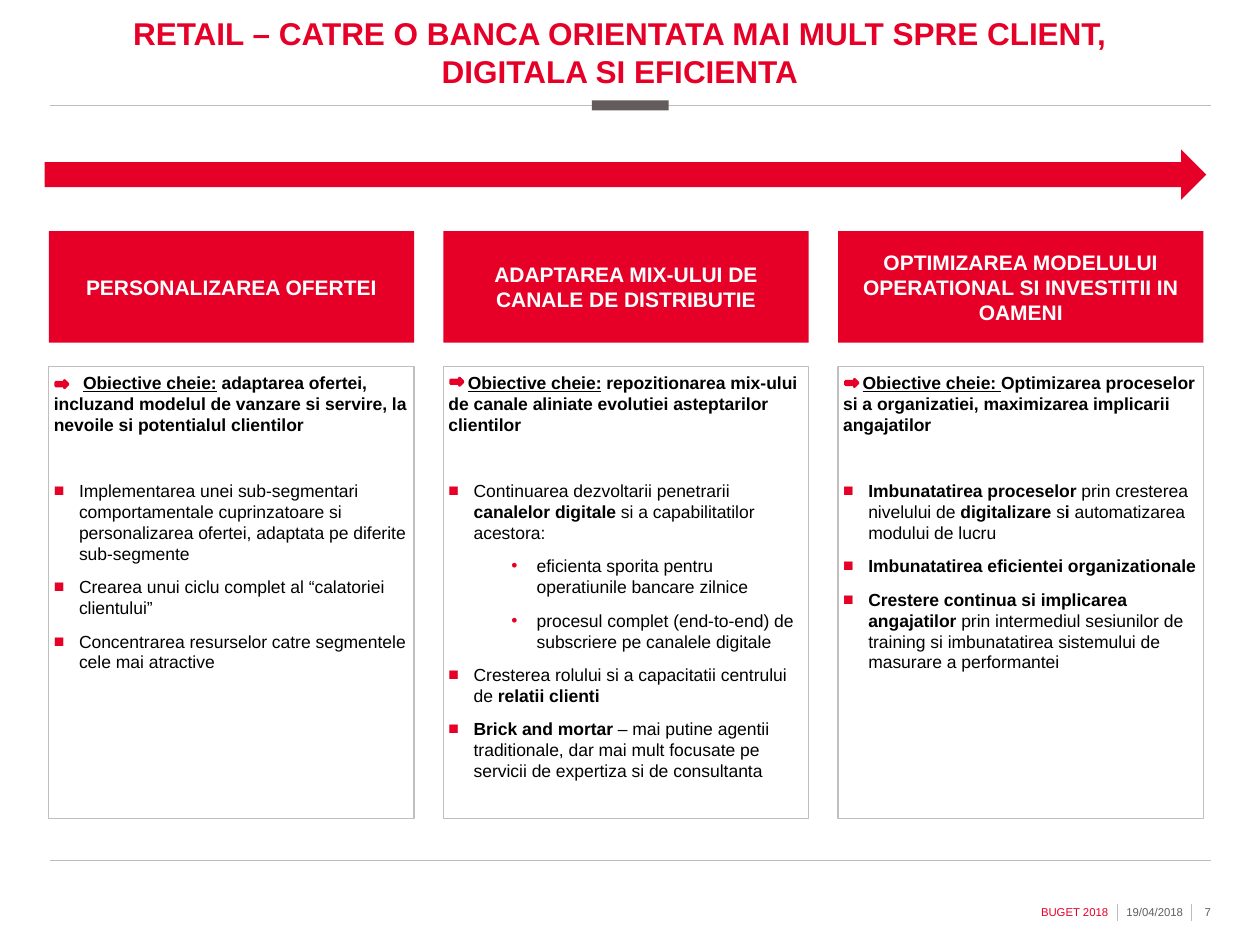
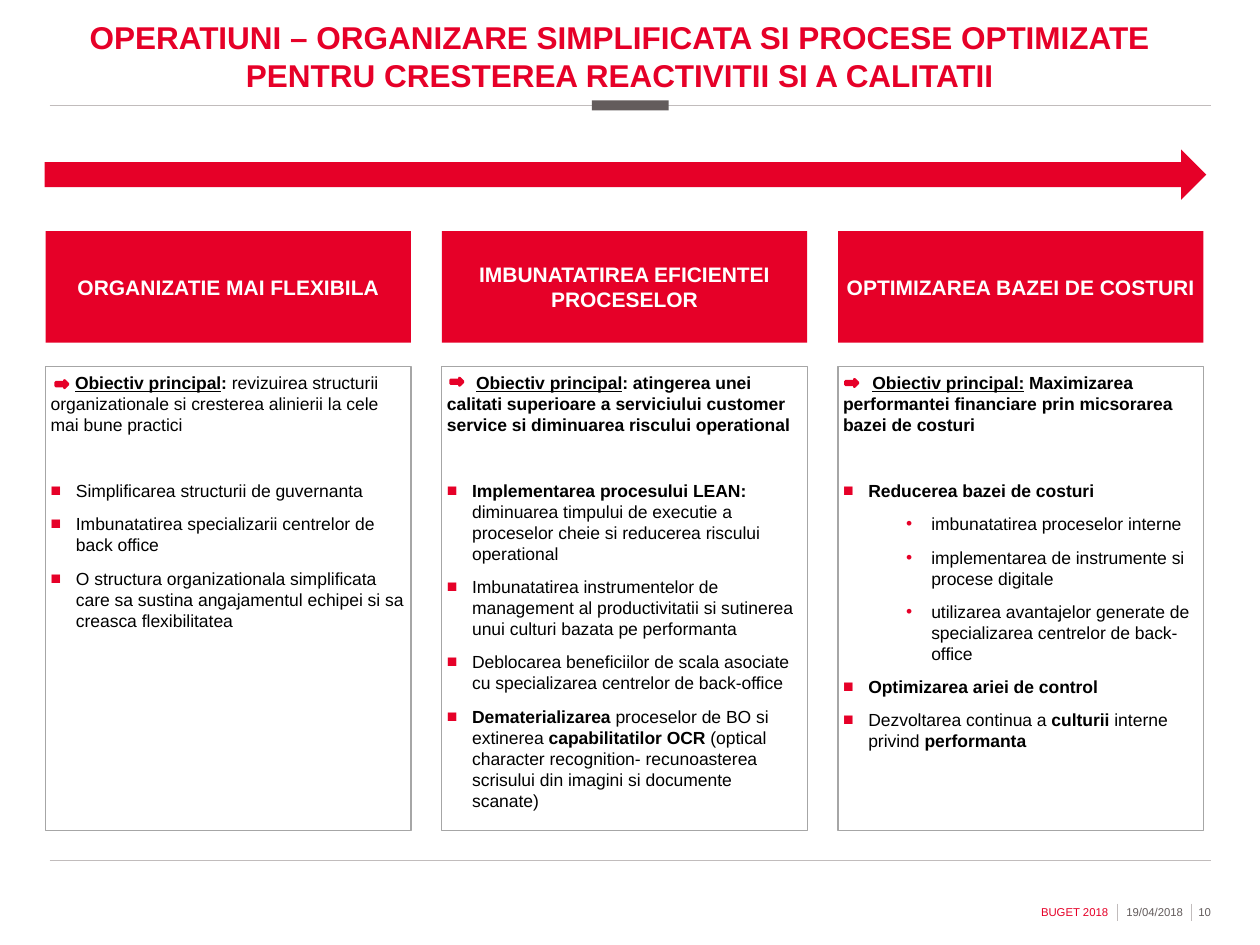
from pptx import Presentation
from pptx.dml.color import RGBColor as Rgb
from pptx.enum.shapes import MSO_CONNECTOR as Link, MSO_SHAPE as Kind
from pptx.enum.text import MSO_ANCHOR as Anchor, PP_ALIGN as Align
from pptx.oxml.ns import qn
from pptx.util import Pt
from lxml.etree import SubElement as Sub

HUE = {"red": "E60028", "grey": "635C5C", "rule": "C1BCBC", "white": "FFFFFF",
       "black": "000000", "edge1": "BFBFBF", "edge2": "A6A6A6"}
SIDES = ("margin_left", "margin_top", "margin_right", "margin_bottom")
STEP = 14.4
HEAD_TOP, HEAD_H, PANEL_TOP, WIDE = 132, 63.8, 209.5, 208.8
RIGHT = 478.9

# Each column: heading, lead indent, underlined label, lead text, bullets.
# An asterisk switches bold; a leading ">" marks a second-level bullet.
DECK = [
    {"title": "RETAIL – CATRE O BANCA ORIENTATA MAI MULT SPRE CLIENT,\nDIGITALA SI EFICIENTA",
     "top": 7.6, "page": "7", "pitch": 225.5, "tall": 258.2,
     "fill": "white", "edge": "edge1",
     "cols": [
         ("PERSONALIZAREA OFERTEI", 16.7, "Obiective cheie:",
          " adaptarea ofertei, incluzand modelul de vanzare si servire, la nevoile si potentialul clientilor",
          ["*Implementarea unei sub-segmentari comportamentale cuprinzatoare si personalizarea ofertei, "
           "adaptata pe diferite sub-segmente",
           "*Crearea unui ciclu complet al “calatoriei clientului”",
           "*Concentrarea resurselor catre segmentele cele mai atractive"]),
         ("ADAPTAREA MIX-ULUI DE CANALE DE DISTRIBUTIE", 11.1, "Obiective cheie:",
          " repozitionarea mix-ului de canale aliniate evolutiei asteptarilor clientilor",
          ["*Continuarea dezvoltarii penetrarii *canalelor digitale *si a capabilitatilor acestora:",
           ">*eficienta sporita pentru operatiunile bancare zilnice",
           ">*procesul complet (end-to-end) de subscriere pe canalele digitale",
           "*Cresterea rolului si a capacitatii centrului de *relatii clienti",
           "Brick and mortar *– mai putine agentii traditionale, dar mai mult focusate pe "
           "servicii de expertiza si de consultanta"]),
         ("OPTIMIZAREA MODELULUI OPERATIONAL SI INVESTITII IN OAMENI", 11.1, "Obiective cheie: ",
          "Optimizarea proceselor si a organizatiei, maximizarea implicarii angajatilor",
          ["Imbunatatirea proceselor *prin cresterea nivelului de *digitalizare *s*i *automatizarea "
           "modului de lucru",
           "Imbunatatirea eficientei organizationale",
           "Crestere continua si implicarea angajatilor *prin intermediul sesiunilor de training si "
           "imbunatatirea sistemului de masurare a performantei"])]},
    {"title": "OPERATIUNI – ORGANIZARE SIMPLIFICATA SI PROCESE OPTIMIZATE "
              "PENTRU CRESTEREA REACTIVITII SI A CALITATII",
     "top": 10, "page": "10", "pitch": 226.4, "tall": 265,
     "fill": None, "edge": "edge2",
     "cols": [
         ("ORGANIZATIE MAI FLEXIBILA", 13.9, "Obiectiv principal",
          ": *revizuirea structurii organizationale si cresterea alinierii la cele mai bune practici",
          ["*Simplificarea structurii de guvernanta",
           "*Imbunatatirea specializarii centrelor de back office",
           "*O structura organizationala simplificata care sa sustina angajamentul echipei si sa "
           "creasca flexibilitatea"]),
         ("IMBUNATATIREA EFICIENTEI PROCESELOR", 16.7, "Obiectiv principal",
          ": atingerea unei calitati superioare a serviciului customer service si diminuarea "
          "riscului operational",
          ["Implementarea procesului LEAN: *diminuarea timpului de executie a proceselor cheie si "
           "reducerea riscului operational",
           "*Imbunatatirea instrumentelor de management al productivitatii si sutinerea unui culturi "
           "bazata pe performanta",
           "*Deblocarea beneficiilor de scala asociate cu specializarea centrelor de back-office",
           "Dematerializarea *proceselor de BO si extinerea *capabilitatilor OCR *(optical character "
           "recognition- recunoasterea scrisului din imagini si documente scanate)"]),
         ("OPTIMIZAREA BAZEI DE COSTURI", 16.7, "Obiectiv principal:",
          " Maximizarea performantei financiare prin micsorarea bazei de costuri",
          ["Reducerea bazei de costuri",
           ">*imbunatatirea proceselor interne",
           ">*implementarea de instrumente si procese digitale",
           ">*utilizarea avantajelor generate de specializarea centrelor de back-office",
           "Optimizarea ariei de control",
           "*Dezvoltarea continua a *culturii* interne privind *performanta"])]},
]


def box(x, y, w, h, kind=None, fill=None, line=None, weight=0.75, pads=(0, 0, 0, 0), **frame):
    """Add a preset shape, or a text box when no kind is given."""
    spot = [Pt(v) for v in (x, y, w, h)]
    if kind is None:
        shape = slide.shapes.add_textbox(*spot)
    else:
        shape = slide.shapes.add_shape(kind, *spot)
        shape.shadow.inherit = False
        for name, paint in ((fill, shape.fill), (line, shape.line.fill)):
            if name:
                paint.solid()
                paint.fore_color.rgb = Rgb.from_string(HUE[name])
            else:
                paint.background()
        if line:
            shape.line.width = Pt(weight)
    look = {"word_wrap": True, **{s: Pt(p) for s, p in zip(SIDES, pads)}, **frame}
    for key, val in look.items():
        setattr(shape.text_frame, key, val)
    return shape


def put(par, text, size, hue, bold=True, line=False):
    """Add runs to a paragraph; an asterisk switches bold, a newline breaks the line."""
    for i, part in enumerate(text.split("*")):
        for j, piece in enumerate(part.split("\n")):
            if j:
                par.add_line_break()
            if not piece:
                continue
            run = par.add_run()
            run.text = piece
            look = {"name": "Arial", "size": Pt(size), "bold": bold == (i % 2 == 0), "underline": line}
            for key, val in look.items():
                setattr(run.font, key, val)
            run.font.color.rgb = Rgb.from_string(HUE[hue])


deck = Presentation()
deck.slide_width, deck.slide_height = Pt(720), Pt(540)

for page in DECK:
    slide = deck.slides.add_slide(deck.slide_layouts[6])

    # Rules, footer and title
    for x1, y1, x2, y2 in ((28.4, 60.4, 691.9, 60.4), (28.4, 491.6, 691.9, 491.6),
                           (638.6, 516.4, 638.6, 526.2), (680.8, 516.4, 680.8, 526.2)):
        rule = slide.shapes.add_connector(Link.STRAIGHT, Pt(x1), Pt(y1), Pt(x2), Pt(y2))
        rule.line.width = Pt(0.5)
        rule.line.color.rgb = Rgb.from_string(HUE["rule"])
        Sub(rule._element.spPr, qn("a:effectLst"))
    box(338.2, 57.4, 44, 5.7, Kind.RECTANGLE, "grey")
    for x, w, pad, text, hue in ((586.2, 50, 2.9, "BUGET 2018", "red"),
                                 (639.2, 39.8, 2.9, "19/04/2018", "grey"),
                                 (681.2, 10.8, 0, page["page"], "grey")):
        par = box(x, 514.5, w, 13, pads=(0, 2.9, pad, 2.9), word_wrap=False).text_frame.paragraphs[0]
        par.alignment = Align.RIGHT
        put(par, text, 6.5, hue, bold=False)
    par = box(25.6, page["top"], 663.1, 44.2, pads=(0, 0, 5.8, 0),
              vertical_anchor=Anchor.MIDDLE).text_frame.paragraphs[0]
    par.alignment = Align.CENTER
    put(par, page["title"], 18, "red")

    # Columns
    box(25.5, 85.4, 663.8, 28.8, Kind.RIGHT_ARROW, "red")
    for i, (head, shift, label, lead, items) in enumerate(page["cols"]):
        x = RIGHT - (2 - i) * page["pitch"]
        par = box(x, HEAD_TOP, WIDE, HEAD_H, Kind.RECTANGLE, "red", pads=(4.3, 3.6, 4.3, 3.6),
                  vertical_anchor=Anchor.MIDDLE).text_frame.paragraphs[0]
        par.alignment = Align.CENTER
        put(par, head, 12, "white")

        text = box(x, PANEL_TOP, WIDE, page["tall"], Kind.RECTANGLE, page["fill"], page["edge"],
                   pads=(2.9,) * 4, vertical_anchor=Anchor.TOP).text_frame
        par = text.paragraphs[0]
        par._p.get_or_add_pPr().set("indent", str(Pt(shift)))
        for key, val in {"alignment": Align.LEFT, "line_spacing": Pt(12), "space_after": Pt(23)}.items():
            setattr(par, key, val)
        put(par, label, 10, "black", line=True)
        put(par, lead, 10, "black")

        for item in items:
            deep = item.startswith(">")
            par = text.add_paragraph()
            prop = par._p.get_or_add_pPr()
            prop.set("marL", str(Pt(50.4 if deep else STEP)))
            prop.set("indent", str(Pt(-STEP)))
            Sub(Sub(prop, qn("a:buClr")), qn("a:srgbClr"), val=HUE["red"])
            Sub(prop, qn("a:buFont"), typeface="Arial")
            Sub(prop, qn("a:buChar"), char="•" if deep else "■")
            for key, val in {"alignment": Align.LEFT, "level": int(deep), "line_spacing": Pt(12),
                             "space_before": Pt(3), "space_after": Pt(4)}.items():
                setattr(par, key, val)
            put(par, item.lstrip(">"), 10, "black")

    for i, y in enumerate((217.4, 216, 216.7)):
        box(31.8 + 225.7 * i, y, 7.2, 4.3, Kind.RIGHT_ARROW, "red", "red", 1.5)

deck.save("out.pptx")
